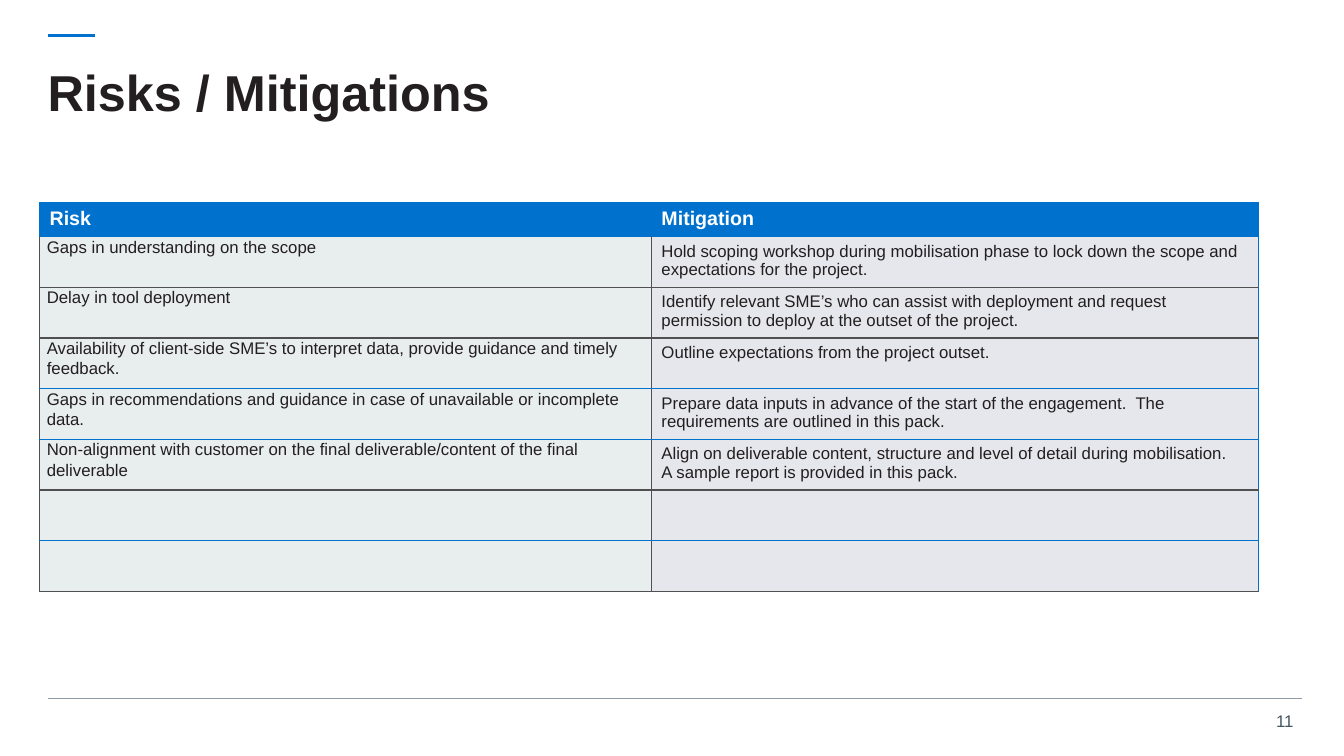
from dataclasses import dataclass

from lxml.etree import SubElement
from pptx import Presentation
from pptx.dml.color import RGBColor as Rgb
from pptx.enum.shapes import MSO_CONNECTOR as Connector
from pptx.enum.text import MSO_ANCHOR as Anchor, PP_ALIGN as Align
from pptx.oxml.ns import qn
from pptx.util import Cm, Pt


@dataclass(frozen=True)
class Theme:
    font: str = "Arial"
    blue: str = "0072CE"
    ink: str = "231F20"
    slate: str = "425563"
    rule: str = "919EA8"
    white: str = "FFFFFF"
    border: str = "505050"
    risk_fill: str = "E8EDEE"
    mitigation_fill: str = "E6E7ED"
    title_size: int = 36
    header_size: int = 14
    body_size: int = 12


THEME = Theme()
HEADINGS = ("Risk", "Mitigation")
RISKS = [
    ("Gaps in understanding on the scope",
     ["Hold scoping workshop during mobilisation phase to lock down the scope and expectations for the project."]),
    ("Delay in tool deployment",
     ["Identify relevant SME’s who can assist with deployment and request permission to deploy at the outset of the project."]),
    ("Availability of client-side SME’s to interpret data, provide guidance and timely feedback.",
     ["Outline expectations from the project outset."]),
    ("Gaps in recommendations and guidance in case of unavailable or incomplete data.",
     ["Prepare data inputs in advance of the start of the engagement.  The requirements are outlined in this pack."]),
    ("Non-alignment with customer on the final deliverable/content of the final deliverable",
     ["Align on deliverable content, structure and level of detail during mobilisation.",
      "A sample report is provided in this pack."]),
    ("", [""]),
    ("", [""]),
]
BLUE_BELOW = {0, 3, 4, 6}


def write(frame, lines, size, color, bold=False, spacing=None, align=Align.LEFT):
    frame.word_wrap = True
    for index, line in enumerate(lines):
        paragraph = frame.add_paragraph() if index else frame.paragraphs[0]
        paragraph.alignment = align
        if spacing:
            paragraph.line_spacing = spacing
        if line:
            run = paragraph.add_run()
            run.text = line
            run.font.name = THEME.font
            run.font.size = Pt(size)
            run.font.bold = bold
            run.font.color.rgb = Rgb.from_string(color)


def set_margins(holder, side, end):
    holder.margin_left = holder.margin_right = Cm(side)
    holder.margin_top = holder.margin_bottom = Cm(end)


def draw_rule(slide, left, top, width, color, weight):
    rule = slide.shapes.add_connector(
        Connector.STRAIGHT, Cm(left), Cm(top), Cm(left + width), Cm(top))
    rule.line.color.rgb = Rgb.from_string(color)
    rule.line.width = Pt(weight)
    SubElement(rule._element.spPr, qn("a:effectLst"))


def draw_title(slide, left, top, width, height):
    draw_rule(slide, left, top, 1.2, THEME.blue, 2)
    title = slide.shapes.add_textbox(
        Cm(left), Cm(top + 0.3), Cm(width), Cm(height - 0.3)).text_frame
    set_margins(title, 0, 0)
    title.vertical_anchor = Anchor.MIDDLE
    write(title, ["Risks / Mitigations"], THEME.title_size, THEME.ink, True, 0.9)


def draw_footer(slide, left, top, width):
    draw_rule(slide, left, top, width, THEME.rule, 0.75)
    number = slide.shapes.add_textbox(
        Cm(left + width - 1), Cm(top + 0.18), Cm(1.05), Cm(0.76)).text_frame
    set_margins(number, 0.25, 0.13)
    write(number, ["11"], THEME.body_size, THEME.slate, align=Align.RIGHT)


def style_cell(cell, fill, borders):
    properties = cell._tc.get_or_add_tcPr()
    for side, color in zip(("lnL", "lnR", "lnT", "lnB"), borders):
        line = SubElement(properties, qn(f"a:{side}"), w=str(Pt(1)))
        SubElement(SubElement(line, qn("a:solidFill")), qn("a:srgbClr"), val=color)
    cell.fill.solid()
    cell.fill.fore_color.rgb = Rgb.from_string(fill)


def line_below(row):
    return THEME.blue if row in BLUE_BELOW else THEME.border


def draw_risk_table(slide, left, top, width, height):
    header_height = 0.82
    risk_width = round(width * 0.502, 2)
    risk_table = slide.shapes.add_table(
        len(RISKS) + 1, 2, Cm(left), Cm(top), Cm(width), Cm(height)).table
    risk_table.first_row = risk_table.horz_banding = False
    risk_table.columns[0].width = Cm(risk_width)
    risk_table.columns[1].width = Cm(width - risk_width)
    risk_table.rows[0].height = Cm(header_height)

    for column, heading in enumerate(HEADINGS):
        cell = risk_table.cell(0, column)
        set_margins(cell, 0.25, 0.13)
        write(cell.text_frame, [heading], THEME.header_size, THEME.white, True)
        style_cell(cell, THEME.blue, [THEME.blue] * 4)

    for row, (risk, mitigation) in enumerate(RISKS, 1):
        risk_table.rows[row].height = Cm((height - header_height) / len(RISKS))
        above, below = line_below(row - 1), line_below(row)
        risk_cell, mitigation_cell = risk_table.cell(row, 0), risk_table.cell(row, 1)
        set_margins(risk_cell, 0.18, 0)
        set_margins(mitigation_cell, 0.25, 0.13)
        write(risk_cell.text_frame, [risk], THEME.body_size, THEME.ink, spacing=1.07)
        write(mitigation_cell.text_frame, mitigation, THEME.body_size, THEME.ink)
        style_cell(risk_cell, THEME.risk_fill,
                   (THEME.border, THEME.border, above, below))
        style_cell(mitigation_cell, THEME.mitigation_fill,
                   (THEME.border, THEME.blue, above, below))


def main():
    deck = Presentation()
    deck.slide_width, deck.slide_height = Cm(33.87), Cm(19.05)
    slide = deck.slides.add_slide(deck.slide_layouts[6])
    draw_footer(slide, 1.2, 17.6, 31.6)
    draw_title(slide, 1.2, 0.9, 31.67, 2.7)
    draw_risk_table(slide, 1, 5.11, 30.71, 9.75)
    deck.save("out.pptx")


if __name__ == "__main__":
    main()
